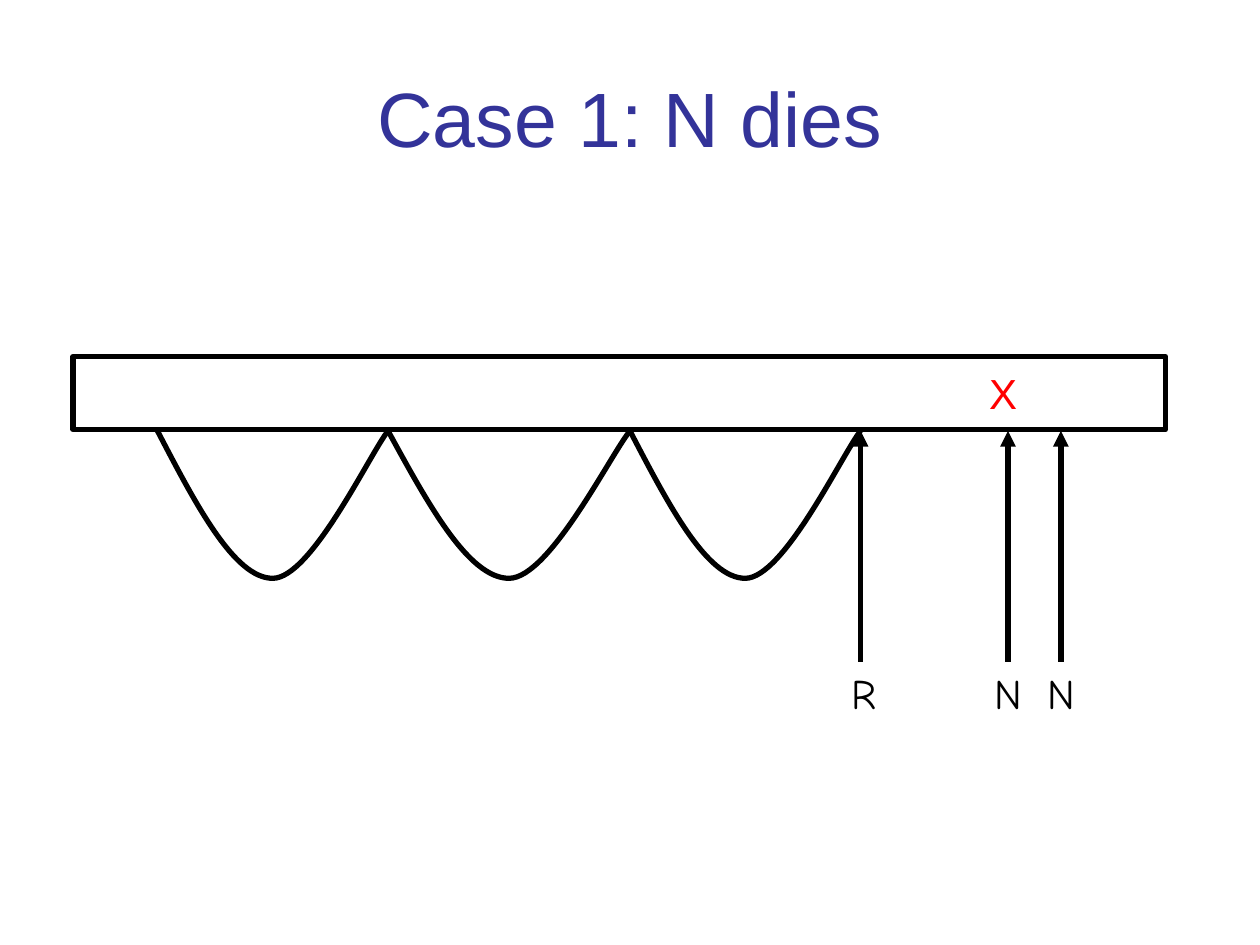
from dataclasses import dataclass

from lxml import etree
from pptx import Presentation, util as u
from pptx.dml.color import RGBColor
from pptx.enum import shapes, text
from pptx.oxml.ns import qn


@dataclass(frozen=True)
class Theme:
    title_color: RGBColor = RGBColor(0x33, 0x33, 0x99)
    ink: RGBColor = RGBColor(0, 0, 0)
    failed: RGBColor = RGBColor(0xFF, 0, 0)
    font: str = "Arial"
    label_font: str = "Comic Neue"
    title_size: int = 44
    label_size: int = 24
    stroke: int = 3


THEME = Theme()
TITLE = "Case 1: N dies"
LOG = (0.58, 2.83, 8.67, 0.58)
HOP_STOPS = (1.25, 3.08, 5, 6.83)
HOP_DEPTH = 1.17
# Two Bezier curves as shares of a hop's width and depth
HOP_CURVE = ((1 / 6, 0.5), (1 / 3, 1), (0.5, 1),
             (2 / 3, 1), (0.92, 0.16), (1, 0))
POINTERS = (("R", 6.83, 0.38), ("N", 8, 0.63), ("N", 8.42, 0.63))
LOG_BOTTOM, POINTER_BOTTOM = 3.42, 5.25
LABEL_HEIGHT, LABEL_OVERHANG = 0.5, 0.21
CROSS = ("X", 7.65, 2.87, 0.52)


def add_run(paragraph, words, font, size, color):
    run = paragraph.add_run()
    run.text = words
    run.font.name = font
    run.font.size = u.Pt(size)
    run.font.color.rgb = color


def style_line(line):
    line.color.rgb = THEME.ink
    line.width = u.Pt(THEME.stroke)


def style_outline(shape):
    shape.shadow.inherit = False
    shape.fill.background()
    style_line(shape.line)


def add_label(slide, words, left, top, width, font, color):
    box = slide.shapes.add_textbox(
        *map(u.Inches, (left, top, width, LABEL_HEIGHT)))
    box.text_frame.word_wrap = True
    paragraph = box.text_frame.paragraphs[0]
    paragraph.alignment = text.PP_ALIGN.RIGHT
    add_run(paragraph, words, font, THEME.label_size, color)


def add_hop(slide, start, end):
    points = [(u.Inches(start + x * (end - start)),
               u.Inches(LOG_BOTTOM + y * HOP_DEPTH)) for x, y in HOP_CURVE]
    builder = slide.shapes.build_freeform(
        u.Inches(start), u.Inches(LOG_BOTTOM))
    builder.add_line_segments(points, close=False)
    hop = builder.convert_to_shape()
    style_outline(hop)
    # Every three straight segments become one cubic curve
    segments = list(hop._element.iter(qn("a:lnTo")))
    outline = segments[0].getparent()
    for first in range(0, len(segments), 3):
        curve = etree.SubElement(outline, qn("a:cubicBezTo"))
        for segment in segments[first:first + 3]:
            curve.append(segment[0])
            outline.remove(segment)


def add_pointer(slide, name, x, label_width):
    arrow = slide.shapes.add_connector(
        shapes.MSO_CONNECTOR.STRAIGHT,
        *map(u.Inches, (x, POINTER_BOTTOM, x, LOG_BOTTOM)))
    style_line(arrow.line)
    etree.SubElement(arrow.line._get_or_add_ln(), qn("a:tailEnd"),
                     type="triangle")
    etree.SubElement(arrow._element.spPr, qn("a:effectLst"))
    add_label(slide, name, x + LABEL_OVERHANG - label_width, POINTER_BOTTOM,
              label_width, THEME.label_font, THEME.ink)


def add_title(slide):
    title = slide.shapes.title
    title.left, title.top, title.width, title.height = map(
        u.Inches, (0.5, 0.3, 9, 1.25))
    title.text_frame.vertical_anchor = text.MSO_ANCHOR.MIDDLE
    paragraph = title.text_frame.paragraphs[0]
    paragraph.alignment = text.PP_ALIGN.CENTER
    add_run(paragraph, TITLE, THEME.font, THEME.title_size, THEME.title_color)


def main():
    presentation = Presentation()
    presentation.slide_width = u.Inches(10)
    presentation.slide_height = u.Inches(7.5)
    slide = presentation.slides.add_slide(presentation.slide_layouts[5])

    add_title(slide)
    log = slide.shapes.add_shape(
        shapes.MSO_SHAPE.RECTANGLE, *map(u.Inches, LOG))
    style_outline(log)
    for start, end in zip(HOP_STOPS, HOP_STOPS[1:]):
        add_hop(slide, start, end)
    for pointer in POINTERS:
        add_pointer(slide, *pointer)
    add_label(slide, *CROSS, THEME.font, THEME.failed)

    presentation.save("out.pptx")


if __name__ == "__main__":
    main()
